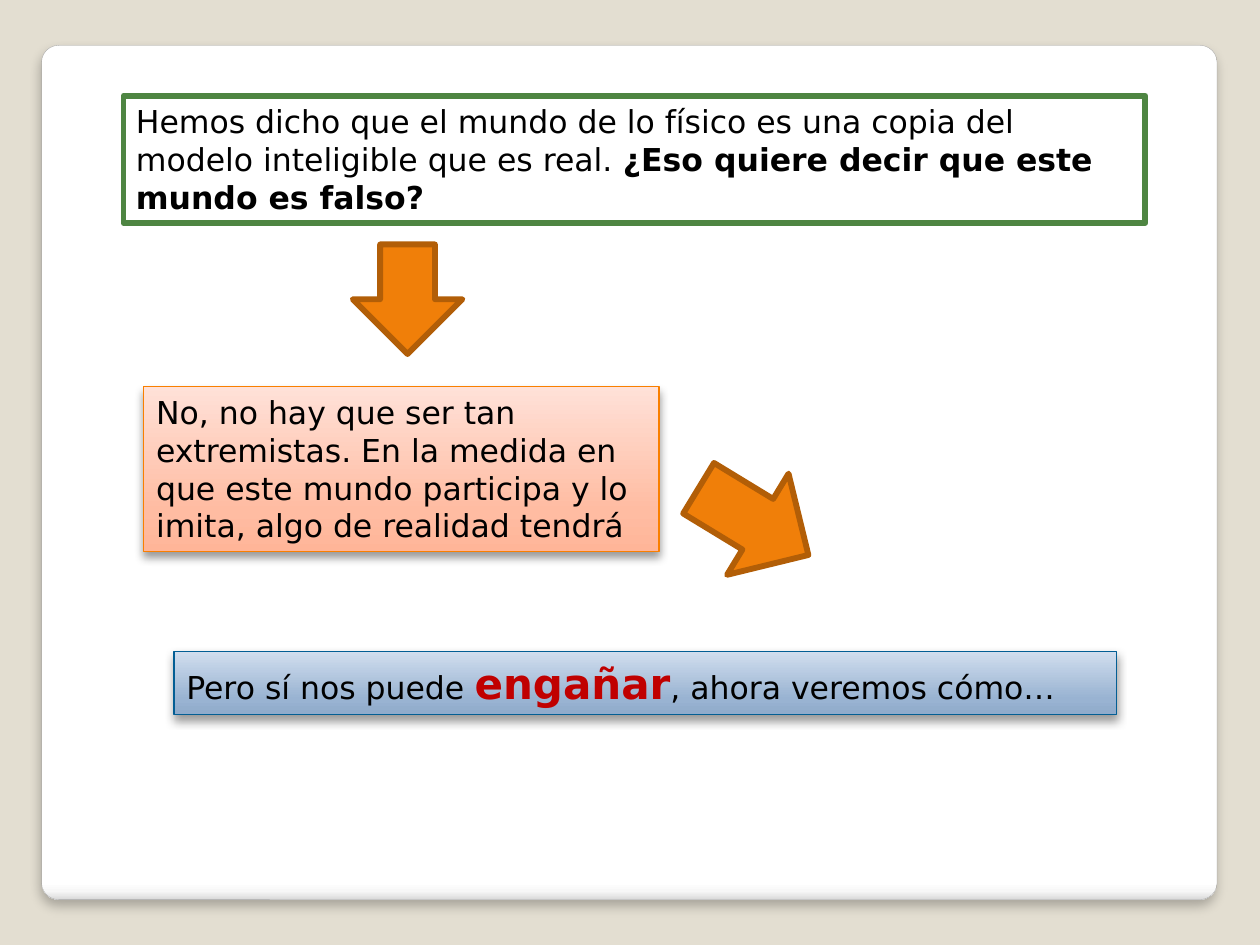
from pptx import Presentation
from pptx.dml.color import RGBColor
from pptx.enum import shapes, text
from pptx.oxml import ns, xmlchemy
from pptx.util import Inches, Pt

FONT = "DejaVu Sans"
SAND = RGBColor(0xE3, 0xDE, 0xD1)
WHITE = RGBColor(0xFF, 0xFF, 0xFF)
BLACK = RGBColor(0x00, 0x00, 0x00)
GREY = RGBColor(0xA4, 0xA4, 0xA4)
GREEN = RGBColor(0x4E, 0x85, 0x42)
RED = RGBColor(0xC0, 0x00, 0x00)
ORANGE = RGBColor(0xF0, 0x7F, 0x09)
BROWN = RGBColor(0xB2, 0x5E, 0x07)
BRIGHT_ORANGE = RGBColor(0xF9, 0x7F, 0x00)
BLUE = RGBColor(0x03, 0x5E, 0x94)

# Gradient stops: (percent, colour), running down or up the shape
PANEL_STOPS = [(0, WHITE), (98, WHITE), (99, RGBColor(0xF7, 0xF7, 0xF7)),
               (100, RGBColor(0xDA, 0xDA, 0xDA))]
PEACH_STOPS = [(0, RGBColor(0xFF, 0xB5, 0x98)), (25, RGBColor(0xFF, 0xBC, 0xA2)),
               (100, RGBColor(0xFF, 0xE1, 0xD8))]
BLUE_STOPS = [(0, RGBColor(0x90, 0xAB, 0xCB)), (25, RGBColor(0x99, 0xB3, 0xD2)),
              (100, RGBColor(0xD1, 0xDE, 0xEE))]
DOWN, UP = 270, 90  # counter-clockwise gradient angles

# Shadows: opacity percent, blur and distance in points
PANEL_SHADOW = (25, 6, 4)
BOX_SHADOW = (40, 5.2, 3)


def add_child(parent, tag, **attributes):
    child = xmlchemy.OxmlElement(tag)
    for name, value in attributes.items():
        child.set(name, str(value))
    parent.append(child)
    return child


def fill_gradient(shape, stops, angle):
    shape.fill.gradient()
    shape.fill.gradient_angle = angle
    stop_list = shape._element.spPr.find(".//" + ns.qn("a:gsLst"))
    for stop in list(stop_list):
        stop_list.remove(stop)
    for percent, color in stops:
        stop = add_child(stop_list, "a:gs", pos=percent * 1000)
        add_child(stop, "a:srgbClr", val=color)


def add_shadow(shape, opacity, blur, distance):
    effects = shape._element.spPr.find(ns.qn("a:effectLst"))
    shadow = add_child(effects, "a:outerShdw", blurRad=int(Pt(blur)),
                       dist=int(Pt(distance)), dir=90 * 60000,
                       algn="t", rotWithShape=0)
    color = add_child(shadow, "a:srgbClr", val=BLACK)
    add_child(color, "a:alpha", val=opacity * 1000)


def add_figure(page, kind, place, line_color, line_width, fill=None,
               stops=None, angle=DOWN, shadow=None):
    shape = page.shapes.add_shape(kind, *(Inches(length) for length in place))
    if stops:
        fill_gradient(shape, stops, angle)
    else:
        shape.fill.solid()
        shape.fill.fore_color.rgb = fill
    shape.line.color.rgb = line_color
    shape.line.width = Pt(line_width)
    add_child(shape._element.spPr.find(ns.qn("a:ln")), "a:round")
    shape.shadow.inherit = False
    if shadow:
        add_shadow(shape, *shadow)
    return shape


def add_text_box(page, place, spans, line_color, line_width, **style):
    """Each span is (words, size, bold, colour)."""
    box = add_figure(page, shapes.MSO_SHAPE.RECTANGLE, place,
                     line_color, line_width, **style)
    frame = box.text_frame
    frame.word_wrap = True
    frame.auto_size = text.MSO_AUTO_SIZE.SHAPE_TO_FIT_TEXT
    frame.vertical_anchor = text.MSO_ANCHOR.TOP
    para = frame.paragraphs[0]
    para.alignment = text.PP_ALIGN.LEFT
    for words, size, bold, color in spans:
        span = para.add_run()
        span.text = words
        span.font.name = FONT
        span.font.size = Pt(size)
        span.font.bold = bold
        span.font.color.rgb = color


def add_arrow(page, kind, place, rotation=0):
    arrow = add_figure(page, kind, place, BROWN, 3.35, fill=ORANGE)
    arrow.rotation = rotation


def main():
    deck = Presentation()
    deck.slide_width, deck.slide_height = Inches(10), Inches(7.5)
    page = deck.slides.add_slide(deck.slide_layouts[6])
    page.background.fill.solid()
    page.background.fill.fore_color.rgb = SAND

    # Rounded panel behind everything
    panel = add_figure(page, shapes.MSO_SHAPE.ROUNDED_RECTANGLE,
                       (0.33, 0.36, 9.33, 6.78), GREY, 0.16,
                       stops=PANEL_STOPS, shadow=PANEL_SHADOW)
    panel.adjustments[0] = 0.02

    # Question
    add_text_box(page, (0.98, 0.76, 8.11, 1.01), [
        ("Hemos dicho que el mundo de lo físico es una copia del modelo "
         "inteligible que es real. ", 18, False, BLACK),
        ("¿Eso quiere decir que este mundo es falso?", 18, True, BLACK),
    ], GREEN, 3.35, fill=WHITE)

    # Answer
    add_text_box(page, (1.14, 3.07, 4.09, 1.31), [
        ("No, no hay que ser tan extremistas. En la medida en que este mundo "
         "participa y lo imita, algo de realidad tendrá", 18, False, BLACK),
    ], BRIGHT_ORANGE, 0.75, stops=PEACH_STOPS, angle=UP, shadow=BOX_SHADOW)

    # Arrows from question to answer to conclusion
    add_arrow(page, shapes.MSO_SHAPE.DOWN_ARROW, (2.8, 1.94, 0.87, 0.87))
    add_arrow(page, shapes.MSO_SHAPE.RIGHT_ARROW, (5.47, 3.67, 1.02, 0.94), 31.3)

    # Conclusion
    add_text_box(page, (1.38, 5.17, 7.48, 0.5), [
        ("Pero sí nos puede ", 18, False, BLACK),
        ("engañar", 24, True, RED),
        (", ahora veremos cómo…", 18, False, BLACK),
    ], BLUE, 0.75, stops=BLUE_STOPS, angle=UP, shadow=BOX_SHADOW)

    deck.save("out.pptx")


if __name__ == "__main__":
    main()
